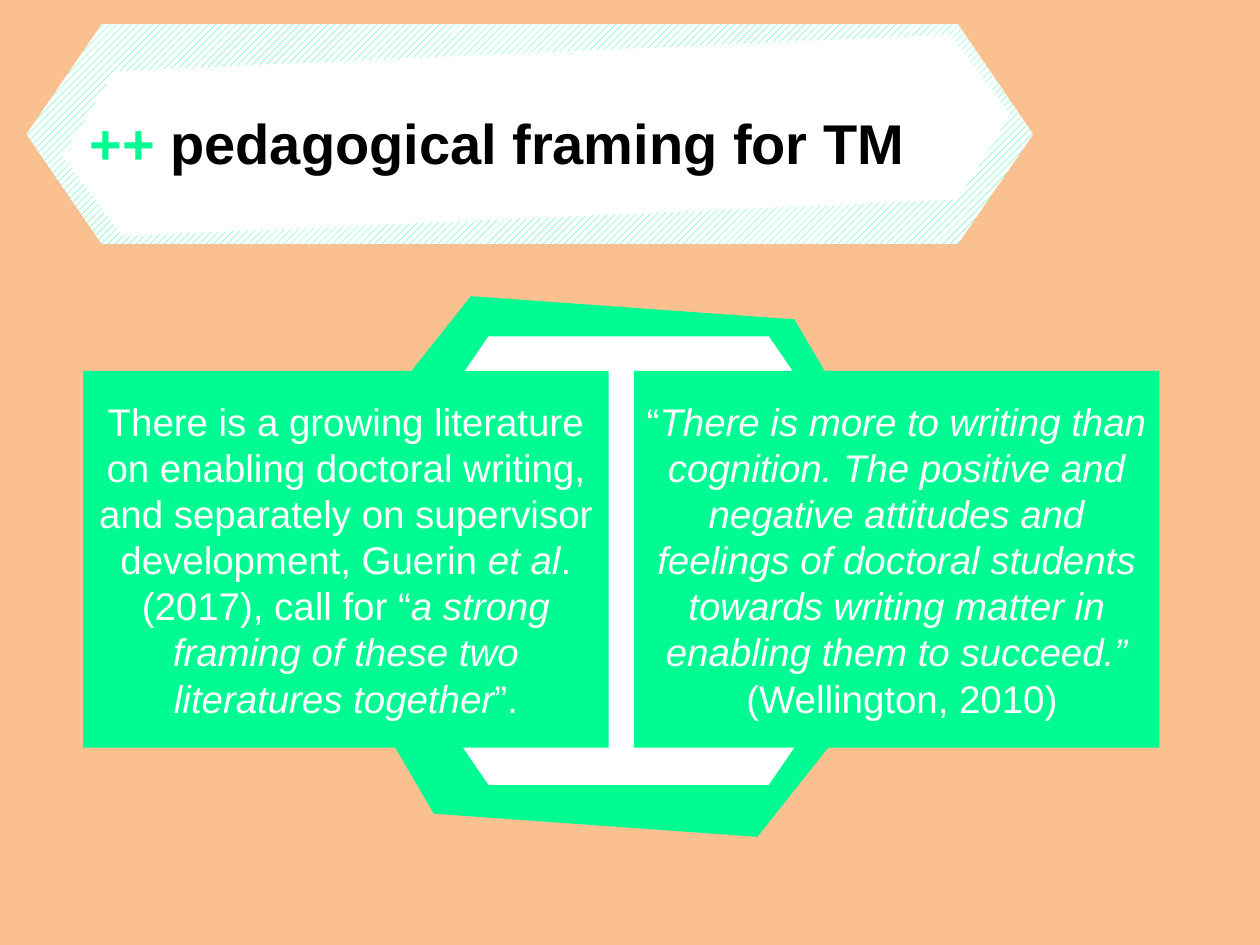
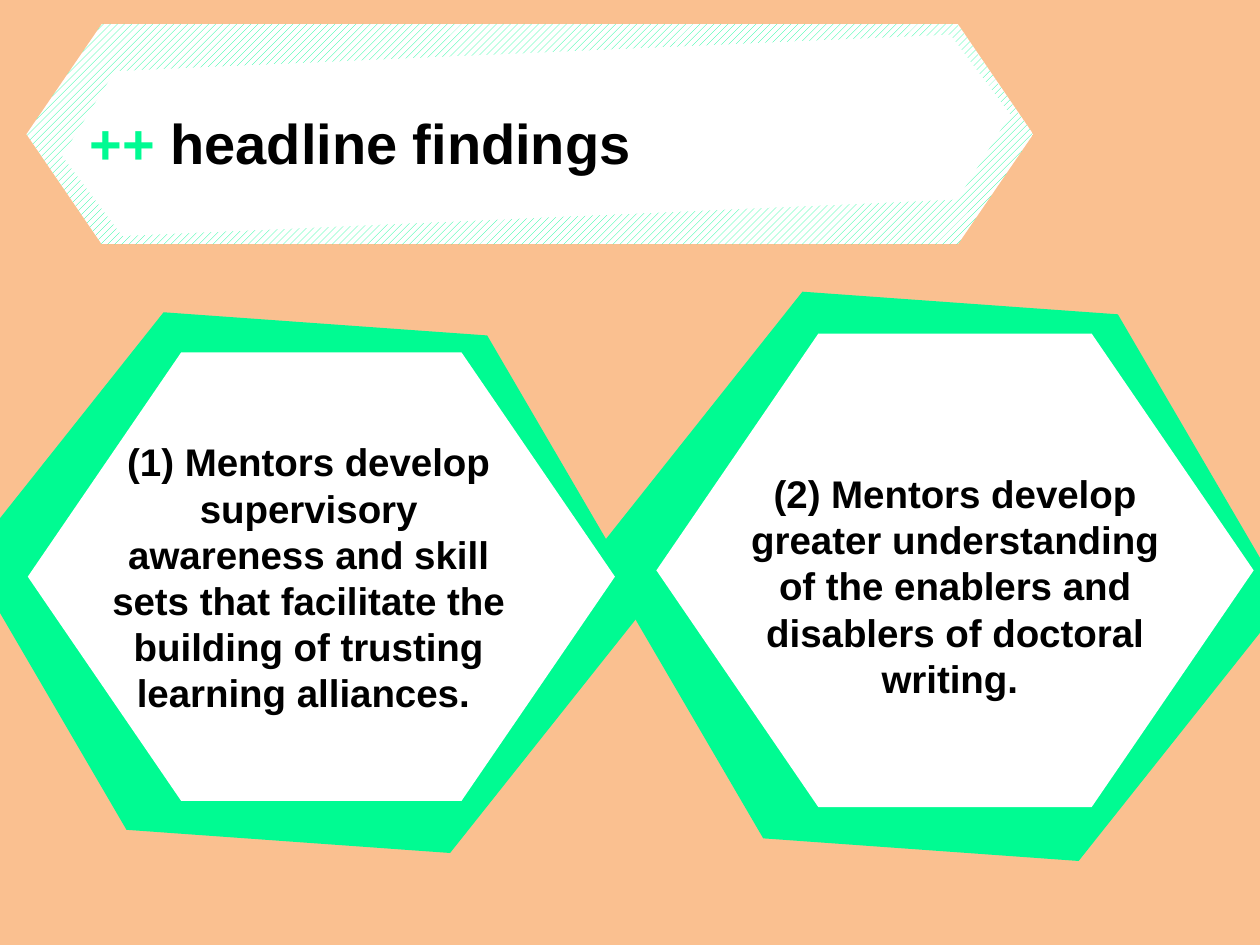
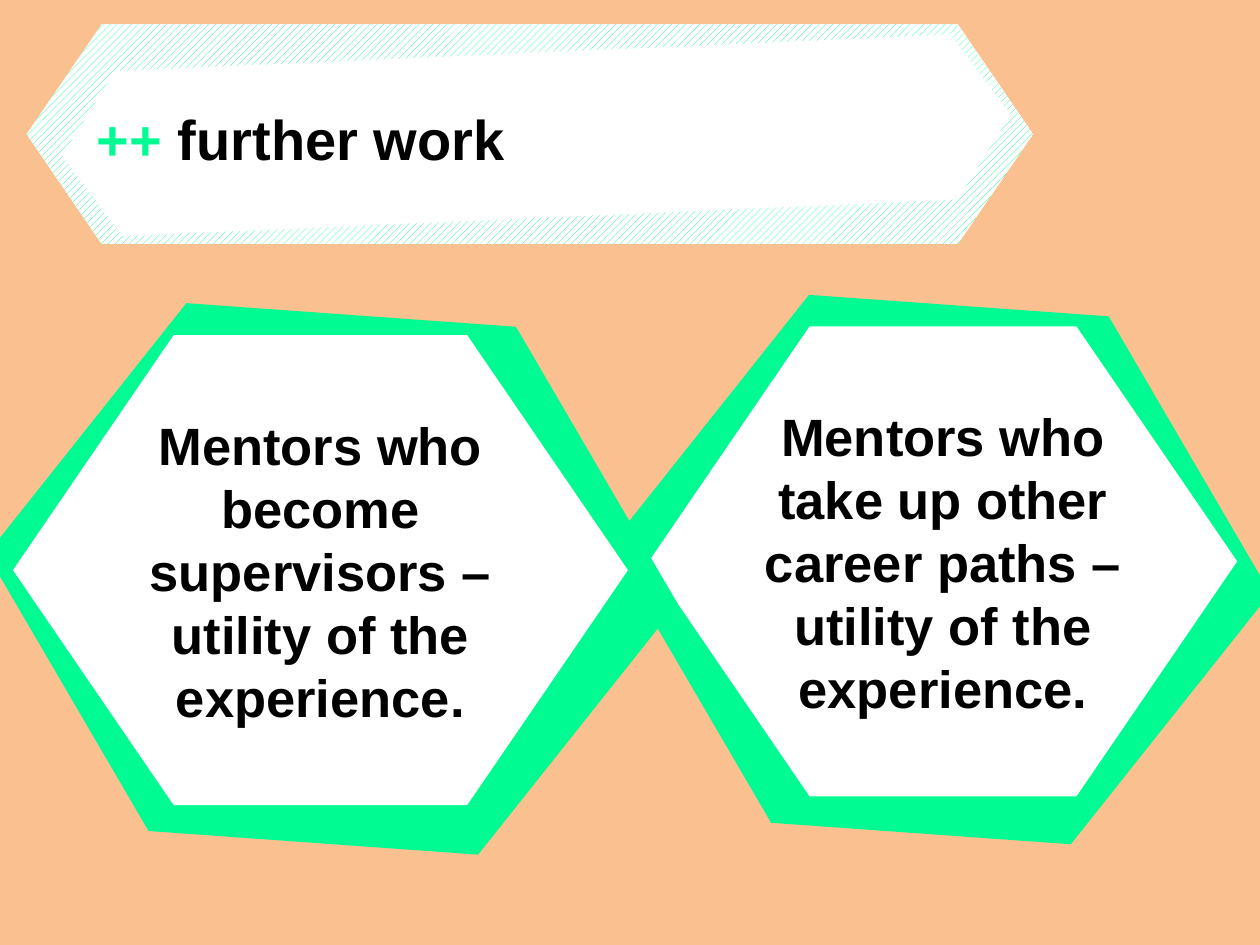
from dataclasses import dataclass

from pptx import Presentation
from pptx.dml.color import RGBColor
from pptx.enum.dml import MSO_PATTERN
from pptx.enum.shapes import MSO_SHAPE
from pptx.enum.text import MSO_ANCHOR, MSO_AUTO_SIZE, PP_ALIGN
from pptx.util import Pt

HEXAGON = MSO_SHAPE.HEXAGON
RECTANGLE = MSO_SHAPE.RECTANGLE
STRIPES = MSO_PATTERN.WIDE_UPWARD_DIAGONAL
LEFT, CENTER = PP_ALIGN.LEFT, PP_ALIGN.CENTER
TOP, MIDDLE = MSO_ANCHOR.TOP, MSO_ANCHOR.MIDDLE
NO_FIT = MSO_AUTO_SIZE.NONE
TITLE_ONLY = 5


@dataclass(frozen=True)
class Theme:
    paper: RGBColor = RGBColor(0xFA, 0xC0, 0x90)
    green: RGBColor = RGBColor(0x00, 0xFB, 0x92)
    white: RGBColor = RGBColor(0xFF, 0xFF, 0xFF)
    black: RGBColor = RGBColor(0x00, 0x00, 0x00)
    font: str = "Arial"
    title: int = 32
    large: int = 30
    body: int = 22
    hex_point: float = 0.342
    tilt: float = 4.1


THEME = Theme()
BAND_BOX = (15.1, 13.7, 575.3, 126)


def write(shape, paragraphs, size=THEME.body, color=THEME.black, bold=False,
          align=CENTER, anchor=MIDDLE, side_inset=7.2):
    tf = shape.text_frame
    tf.word_wrap = True
    tf.auto_size = NO_FIT
    tf.vertical_anchor = anchor
    tf.margin_left = tf.margin_right = Pt(side_inset)
    for i, runs in enumerate(paragraphs):
        p = tf.add_paragraph() if i else tf.paragraphs[0]
        p.alignment = align
        for text, own in runs:
            r = p.add_run()
            r.text = text
            r.font.name = THEME.font
            r.font.size = Pt(size)
            r.font.bold = bold
            r.font.italic = own.get("italic", False)
            r.font.color.rgb = own.get("color", color)


def add_block(s, kind, box, color, rotation=0):
    sp = s.shapes.add_shape(kind, *map(Pt, box))
    sp.shadow.inherit = False
    sp.line.fill.background()
    sp.fill.solid()
    sp.fill.fore_color.rgb = color
    sp.rotation = rotation
    if kind == HEXAGON:
        sp.adjustments[0] = THEME.hex_point
    return sp


def title_band(s, text, box=BAND_BOX, offset=(28.8, 44.6)):
    x, y, w, h = box
    outer = add_block(s, HEXAGON, box, THEME.white)
    outer.fill.patterned()
    outer.fill.pattern = STRIPES
    outer.fill.fore_color.rgb = THEME.green
    outer.fill.back_color.rgb = THEME.white
    add_block(s, HEXAGON, (x + 20.2, y + 16.5, w - 33.1, h - 31.7), THEME.white, -2.5)
    title = s.shapes.title
    title.left, title.top = Pt(x + offset[0]), Pt(y + offset[1])
    title.width, title.height = Pt(512.6), Pt(46.1)
    write(title, [[("++", {"color": THEME.green}), (" " + text, {})]],
          size=THEME.title, bold=True, align=LEFT, anchor=TOP)
    s.shapes.element.append(title.element)


def hex_badge(s, box, scale=1.157, shift=(-8.3, 3.4)):
    x, y, w, h = box
    back = (x + shift[0] - w * (scale - 1) / 2, y + shift[1] - h * (scale - 1) / 2,
            w * scale, h * scale)
    add_block(s, HEXAGON, back, THEME.green, THEME.tilt)
    return add_block(s, HEXAGON, box, THEME.white)


def captioned_badge(s, box, text, inner):
    x, y = box[:2]
    dx, dy, w, h = inner
    hex_badge(s, box)
    caption = s.shapes.add_textbox(Pt(x + dx), Pt(y + dy), Pt(w), Pt(h))
    write(caption, [[(text, {})]], bold=True, anchor=TOP)


def quote_pair(s, box, quotes, gap=14.4):
    x, y, w, h = box
    card_w = (w - gap) / len(quotes)
    for i, quote in enumerate(quotes):
        card = add_block(s, RECTANGLE, (x + i * (card_w + gap), y, card_w, h), THEME.green)
        write(card, quote, color=THEME.white)


def new_slide(prs):
    return prs.slides.add_slide(prs.slide_layouts[TITLE_ONLY])


def framing_slide(prs):
    s = new_slide(prs)
    slanted = {"italic": True}
    hex_badge(s, (191.5, 192.2, 335.5, 256.3))
    quote_pair(s, (47.5, 211.9, 615, 215.3), [
        [[("There is a growing literature on enabling doctoral writing, and separately "
           "on supervisor development, Guerin ", {}),
          ("et al", slanted),
          (". (2017), call for “", {}),
          ("a strong framing of these two literatures together", slanted),
          ("”.", {})]],
        [[("“", {}),
          ("There is more to writing than cognition. The positive and negative attitudes "
           "and feelings of doctoral students towards writing matter in enabling them "
           "to succeed.”", slanted)],
         [(" (Wellington, 2010)", {})]],
    ])
    title_band(s, "pedagogical framing for TM")


def findings_slide(prs):
    s = new_slide(prs)
    captioned_badge(s, (375.1, 190.6, 341.3, 270.7),
                    "(2) Mentors develop greater understanding of the enablers and "
                    "disablers of doctoral writing. ", (41.8, 74.4, 257.8, 140.4))
    captioned_badge(s, (15.9, 201.4, 335.5, 256.3),
                    "(1) Mentors develop supervisory awareness and skill sets that "
                    "facilitate the building of trusting learning alliances. ",
                    (38.8, 45.6, 243.4, 167))
    title_band(s, "headline findings")


def further_work_slide(prs):
    s = new_slide(prs)
    title_band(s, "further work", offset=(33.1, 42.5))
    for box, shift, inset, text in (
        ((370.8, 186.5, 336.2, 268.6), (-1.8, 4.7), 2.9,
         "Mentors who take up other career paths – utility of the experience."),
        ((7.4, 191.5, 351.4, 268.6), (6.8, 5), 7.2,
         "Mentors who become supervisors – utility of the experience."),
    ):
        badge = hex_badge(s, box, scale=1.126, shift=shift)
        write(badge, [[(text, {})]], size=THEME.large, bold=True, side_inset=inset)


def main():
    prs = Presentation()
    prs.slide_width, prs.slide_height = Pt(720), Pt(540)
    fill = prs.slide_master.background.fill
    fill.solid()
    fill.fore_color.rgb = THEME.paper
    framing_slide(prs)
    findings_slide(prs)
    further_work_slide(prs)
    prs.save("out.pptx")


if __name__ == "__main__":
    main()
